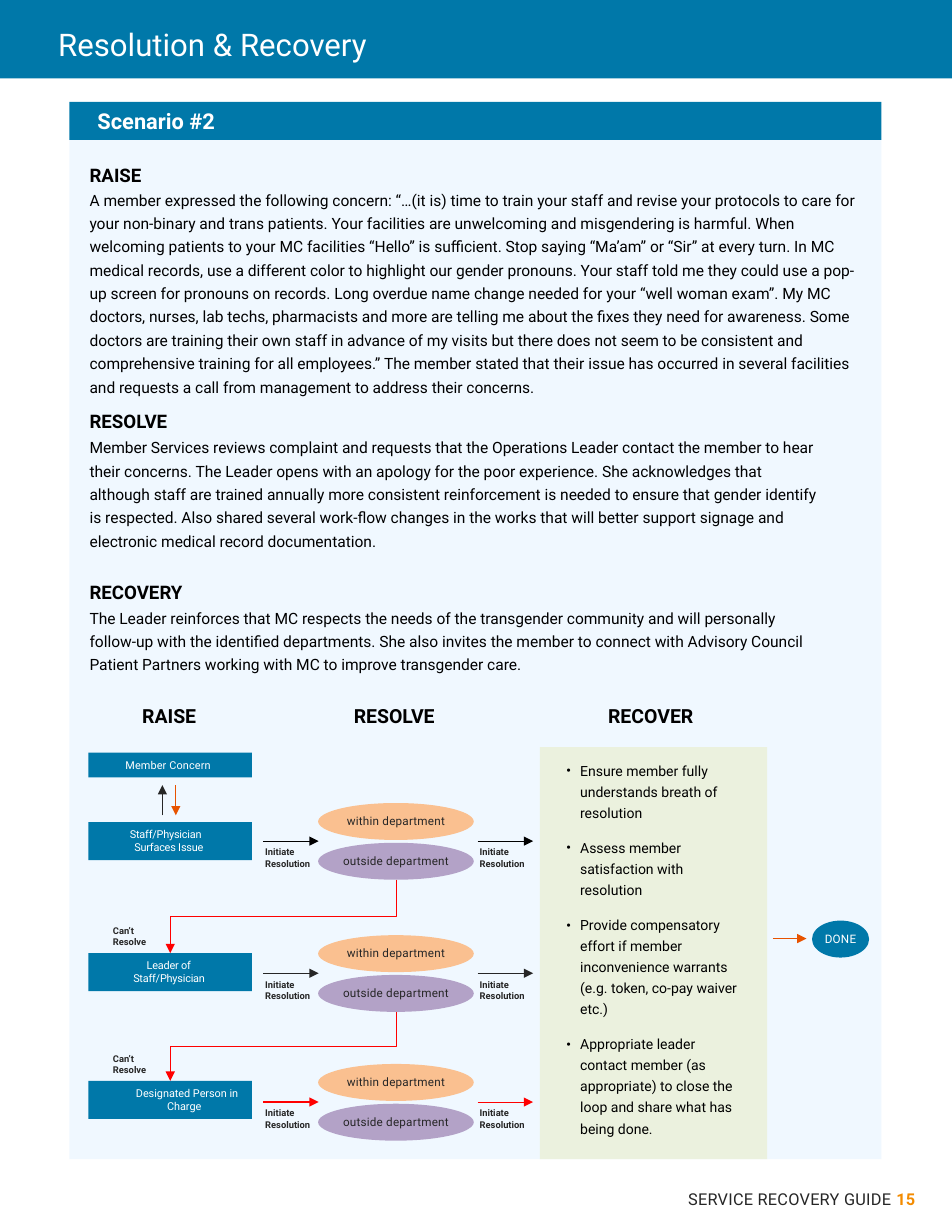
from dataclasses import dataclass
from lxml import etree
from pptx import Presentation, util as u
from pptx.dml import color
from pptx.enum import shapes, text
from pptx.oxml import ns

HUES = dict(blue="0078A9", sky="B4DCFF", peach="FAC090", mauve="B3A2C7", sage="EBF1DE",
            ink="262626", black="000000", white="FFFFFF", red="FF0000", rust="E75300",
            gold="F38B00")
FONT = "Roboto"
LEFT, MID = text.PP_ALIGN.LEFT, text.PP_ALIGN.CENTER
KIND = shapes.MSO_SHAPE

deck = Presentation()
deck.slide_width, deck.slide_height = u.Inches(8.5), u.Inches(11)
COL, ROW = deck.slide_width / 85, deck.slide_height / 110
page = deck.slides.add_slide(deck.slide_layouts[1])
tree = page.shapes


@dataclass
class Box:
    """Left, top, width and height in grid columns and rows."""
    x: float
    y: float
    w: float
    h: float

    def emu(self) -> list[int]:
        return [int(self.x * COL), int(self.y * ROW), int(self.w * COL), int(self.h * ROW)]


@dataclass
class Run:
    words: str
    size: float
    hue: str = "black"
    bold: bool = False
    track: float = 0


@dataclass
class Para:
    """Margins in columns, spacing before in points, leading in lines."""
    runs: list[Run]
    align: int = LEFT
    before: float = 0
    lead: float = 1
    left: float = 0
    right: float = 0
    hang: float = 0
    dot: bool = False


def rgb(hue: str) -> color.RGBColor:
    return color.RGBColor.from_string(HUES[hue])


def node(home, tag: str, **attrs: str):
    return etree.SubElement(home, ns.qn(tag), attrs)


def write(shape, paras: list[Para], pad=(0, 0.5, 0, 0.5), anchor=text.MSO_ANCHOR.TOP,
          wrap: bool = True) -> None:
    frame = shape.text_frame
    frame.auto_size, frame.word_wrap = text.MSO_AUTO_SIZE.NONE, wrap
    frame.vertical_anchor = anchor
    frame.margin_left, frame.margin_right = int(pad[0] * COL), int(pad[2] * COL)
    frame.margin_top, frame.margin_bottom = int(pad[1] * ROW), int(pad[3] * ROW)
    for i, para in enumerate(paras):
        line = frame.add_paragraph() if i else frame.paragraphs[0]
        props = line._p.get_or_add_pPr()
        for key, gap in (("marL", para.left), ("marR", para.right), ("indent", para.hang)):
            props.set(key, str(int(gap * COL)))
        if para.dot:
            node(props, "a:buSzPct", val="83000")
            node(props, "a:buChar", char="•")
        else:
            node(props, "a:buNone")
        line.alignment, line.line_spacing = para.align, para.lead
        line.space_before = u.Pt(para.before)
        for part in para.runs:
            run = line.add_run()
            run.text = part.words
            font = run.font
            font.name, font.size, font.bold = FONT, u.Pt(part.size), part.bold
            font.color.rgb = rgb(part.hue)
            if part.track:
                run._r.get_or_add_rPr().set("spc", str(int(part.track * 100)))


def block(box: Box, hue: str, kind=KIND.RECTANGLE):
    shape = tree.add_shape(kind, *box.emu())
    shape.shadow.inherit = False
    shape.fill.solid()
    shape.fill.fore_color.rgb = rgb(hue)
    shape.line.fill.background()
    return shape


def note(box: Box, paras: list[Para], pad=(0, 0.1, 0, 0), wrap: bool = True) -> None:
    write(tree.add_textbox(*box.emu()), paras, pad, wrap=wrap)


def tag(x: float, y: float, w: float, words: list[str]) -> None:
    """Small bold label, one paragraph per word."""
    note(Box(x, y, w, 3.1), [Para([Run(word, 6, "ink", True)]) for word in words],
         (1, 0.5, 1, 0.5), False)


def oval(box: Box, hue: str, words: str, ink: str = "ink") -> None:
    write(block(box, hue, KIND.OVAL), [Para([Run(words, 7.5, ink, track=0.1)], MID)])


def arrow(x1: float, y1: float, x2: float, y2: float, hue: str, width: float = 0.5,
          kind=shapes.MSO_CONNECTOR.STRAIGHT):
    line = tree.add_connector(kind, int(x1 * COL), int(y1 * ROW), int(x2 * COL), int(y2 * ROW))
    line.line.color.rgb, line.line.width = rgb(hue), u.Pt(width)
    node(line.line._get_or_add_ln(), "a:tailEnd", type="triangle")
    node(line.element.spPr, "a:effectLst")
    return line


def elbow(x1: float, y1: float, x2: float, y2: float) -> None:
    """Down, left, down: an elbow turned a quarter about its centre."""
    cx, cy, dx, dy = (x1 + x2) / 2, (y1 + y2) / 2, (x1 - x2) / 2, (y2 - y1) / 2
    line = arrow(cx - dy, cy - dx, cx + dy, cy + dx, "red", kind=shapes.MSO_CONNECTOR.ELBOW)
    line.element.spPr.find(ns.qn("a:xfrm")).set("rot", "5400000")


def place(holder, box: Box) -> None:
    """Move a placeholder and bring it to the front."""
    holder.left, holder.top, holder.width, holder.height = box.emu()
    tree.element.append(holder.element)


# heading, space before it, space before its text, right margin, text in runs
STORY = [
    ("RAISE", 0, 0, 0, [
        "A member expressed the following concern: “…(it is) time to train your staff and revise your protocols to care for your non-binary and trans patients. Your facilities are unwelcoming and misgendering is harmful. ",
        "When welcoming patients to your MC facilities “Hello” is sufficient. Stop saying “Ma’am” or “Sir” at every turn. In MC medical records, use a different color to highlight our gender pronouns. ",
        "Your staff told me they could use a pop-up screen for pronouns on records. Long overdue name change needed for your “well woman exam”. My MC doctors, nurses, lab techs, pharmacists and more are telling me about the fixes they need for awareness. ",
        "Some doctors are training their own staff in advance of my visits but there does not seem to be consistent and comprehensive training for all employees.” The member stated that their issue has occurred in several facilities and requests a call from management to address their concerns."]),
    ("RESOLVE", 9, 0.6, 4.2, [
        "Member Services reviews complaint and requests that the Operations Leader contact the member to hear their concerns. The Leader opens with an apology for the poor experience. ",
        "She acknowledges that although staff are trained annually more consistent reinforcement is needed to ensure that gender identify is respected. Also shared several work-flow changes in the works that will better support signage and electronic medical record documentation."]),
    ("RECOVERY", 19.4, 0.6, 4.2, [
        "The Leader reinforces that MC respects the needs of the transgender community and will personally follow-up with the identified departments. ",
        "She also invites the member to connect with Advisory Council Patient Partners working with MC to improve transgender care."]),
]
HEADS = [("RAISE", 12.6, 6.8), ("RESOLVE", 31.5, 8.3), ("RECOVER", 54.2, 10.2)]
# top, height, words, alignment, left, right, hang, tracking
STEPS = [
    (67.2, 2.2, "Member Concern", LEFT, 3.3, 0, 0, 0.1),
    (73.4, 3.4, "Staff/Physician Surfaces Issue", LEFT, 4.1, 3, -0.4, -0.1),
    (85.1, 3.4, "Leader of Staff/Physician", LEFT, 4, 3, 1.2, -0.1),
    (96.5, 3.4, "Designated Person in Charge", MID, 2.5, 0, 0.5, 0),
]
# arrow row, top of first oval, arrow hue, width of first arrow
LANES = [(75.1, 71.7, "black", 0.5), (86.9, 83.5, "ink", 0.5), (98.4, 95, "red", 0.75)]
GOALS = [
    "Ensure member fully understands breath of resolution",
    "Assess member satisfaction with resolution",
    "Provide compensatory effort if member inconvenience warrants (e.g. token, co-pay waiver etc.)",
    "Appropriate leader contact member (as appropriate) to close the loop and share what has being done.",
]


def frame_page() -> None:
    block(Box(0, 0, 85, 7), "blue")
    note(Box(2.5, 105.7, 80.2, 2.8),
         [Para([Run("SERVICE RECOVERY GUIDE ", 10.5, "ink", track=0.2),
                Run("15", 10.5, "gold", True, 0.2)], text.PP_ALIGN.RIGHT)], (1, 0.5, 1, 0.5))
    panel = block(Box(6.2, 12.5, 72.5, 91), "sky")
    tint = panel.element.spPr.find(ns.qn("a:solidFill"))[0]
    node(tint, "a:alpha", val="20000")
    write(block(Box(6.2, 9.1, 72.5, 3.4), "blue"),
          [Para([Run("Scenario #2", 14, "white", True)], left=2.5)])
    title = tree.title
    place(title, Box(5.2, 2.1, 74.8, 3.5))
    write(title, [Para([Run("Resolution & Recovery", 20, "white")])], (0, 0.1, 0, 0),
          text.MSO_ANCHOR.MIDDLE)


def tell() -> None:
    paras = []
    for head, gap, near, right, parts in STORY:
        paras += [Para([Run(head, 12, bold=True)], before=gap, left=0.1),
                  Para([Run(part, 10) for part in parts], before=near, lead=1.25, left=0.1,
                       right=right)]
    note(Box(7.9, 14, 69.6, 48.8), paras, (0, 0.6, 0, 0))


def chart_flow() -> None:
    for words, x, w in HEADS:
        note(Box(x, 62.8, w, 2.3), [Para([Run(words, 12.5, bold=True)], left=0.1)])
    for y, h, words, align, left, right, hang, track in STEPS:
        write(block(Box(7.9, y, 14.6, h), "blue"),
              [Para([Run(words, 7, "white", track=track)], align, left=left, right=right,
                    hang=hang)], anchor=text.MSO_ANCHOR.MIDDLE)
    for y, top, hue, width in LANES:
        oval(Box(28.4, top, 13.9, 3.3), "peach", "within department")
        oval(Box(28.4, top + 3.55, 13.9, 3.3), "mauve", "outside department")
        for x, thick in ((23.5, width), (42.65, 0.5)):
            tag(x - 0.8, y, 6.4, ["Initiate", "Resolution"])
            arrow(x, y, x + 4.95, y, hue, thick)
    for lane, step in zip(LANES, STEPS[2:]):
        tag(9.1, step[0] - 3, 5.2, ["Can’t", "Resolve"])
        elbow(35.4, lane[1] + 6.85, 15.2, step[0])
    arrow(14.5, 72.8, 14.5, 70.1, "ink")
    arrow(15.7, 70.1, 15.7, 72.8, "rust")
    arrow(69, 83.8, 72, 83.8, "rust")
    oval(Box(72.5, 82.2, 5.1, 3.3), "blue", "DONE", "white")


def list_goals() -> None:
    body = page.placeholders[1]
    place(body, Box(48.2, 66.7, 20.3, 36.8))
    body.fill.solid()
    body.fill.fore_color.rgb = rgb("sage")
    write(body, [Para([Run(goal, 9)], before=9 if i else 0, lead=1.25, left=2.6, right=2.2,
                      hang=-1.2, dot=True) for i, goal in enumerate(GOALS)], (1, 1, 0, 1))


if __name__ == "__main__":
    frame_page()
    tell()
    chart_flow()
    list_goals()
    deck.save("out.pptx")
